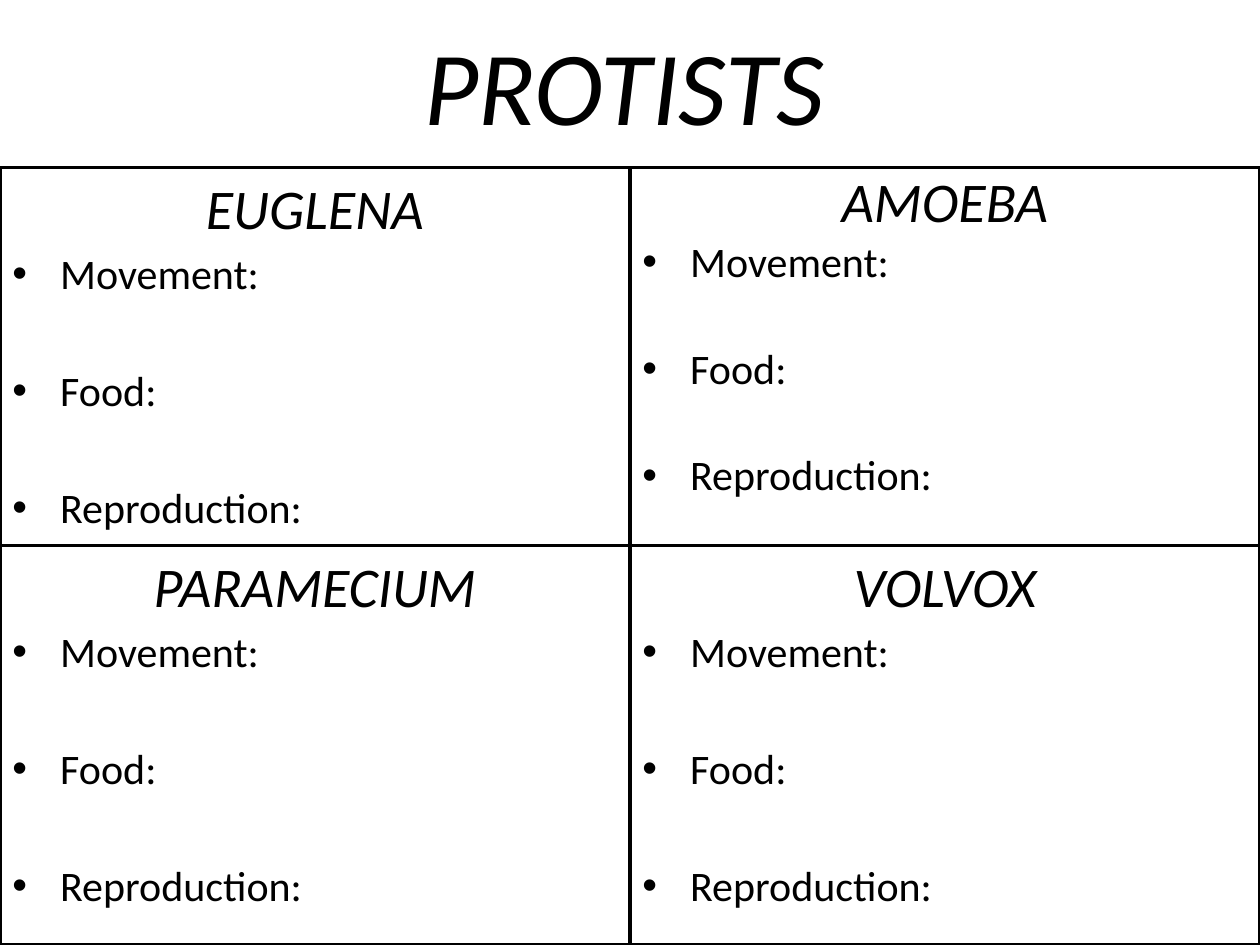
from lxml.etree import SubElement
from pptx import Presentation
from pptx.dml.color import RGBColor
from pptx.enum.shapes import MSO_SHAPE
from pptx.enum.text import MSO_ANCHOR, PP_ALIGN
from pptx.oxml.ns import qn
from pptx.util import Inches, Pt

COLORS = {"ink": "000000", "paper": "FFFFFF"}
FONT = "Calibri"
TOPICS = ["Movement:", "Food:", "Reproduction:"]
COLS = [0, 5, 10]
ROWS = [1.33, 4.33, 7.5]
# name, column, row, line spacing, gap in points between topics
PANELS = [
    ("EUGLENA", 0, 0, 1.0, 38),
    ("AMOEBA", 1, 0, 0.9, 35),
    ("PARAMECIUM", 0, 1, 1.0, 38),
    ("VOLVOX", 1, 1, 1.0, 38),
]


def color(name):
    return RGBColor.from_string(COLORS[name])


def style(para, size, italic=False):
    font = para.font
    font.name, font.size, font.italic = FONT, Pt(size), italic
    font.color.rgb = color("ink")
    para.alignment = PP_ALIGN.CENTER if italic else PP_ALIGN.LEFT


def indent(para, bullet):
    """Set a hanging indent, with a round bullet if asked for."""
    props = para._p.get_or_add_pPr()
    props.set("marL", str(Inches(0.38)))
    props.set("indent", str(-Inches(0.38)))
    if bullet:
        SubElement(props, qn("a:buFont")).set("typeface", "Arial")
        SubElement(props, qn("a:buChar")).set("char", "•")


def add_title(slide, text):
    title = slide.shapes.title
    title.left, title.top = Inches(0.33), 0
    title.width, title.height = Inches(9.25), Inches(ROWS[0])
    frame = title.text_frame
    frame.text = text
    frame.vertical_anchor = MSO_ANCHOR.MIDDLE
    style(frame.paragraphs[0], 60, italic=True)


def add_panel(slide, name, col, row, lines, gap):
    left, top = COLS[col], ROWS[row]
    box = slide.shapes.add_shape(
        MSO_SHAPE.RECTANGLE, Inches(left), Inches(top),
        Inches(COLS[col + 1] - left), Inches(ROWS[row + 1] - top))
    box.shadow.inherit = False
    box.fill.solid()
    box.fill.fore_color.rgb = color("paper")
    box.line.color.rgb = color("ink")
    box.line.width = Pt(2)
    frame = box.text_frame
    frame.word_wrap = True
    frame.vertical_anchor = MSO_ANCHOR.TOP

    for i, text in enumerate([name] + TOPICS):
        para = frame.add_paragraph() if i else frame.paragraphs[0]
        para.text = text
        para.line_spacing = lines
        para.space_before = Pt([2, 4, gap, gap][i])
        style(para, 24 if i else 32, italic=i == 0)
        indent(para, bullet=i > 0)


def main():
    deck = Presentation()
    deck.slide_width, deck.slide_height = Inches(COLS[-1]), Inches(ROWS[-1])
    slide = deck.slides.add_slide(deck.slide_layouts[5])
    add_title(slide, "PROTISTS")
    for panel in PANELS:
        add_panel(slide, *panel)
    deck.save("out.pptx")


if __name__ == "__main__":
    main()
